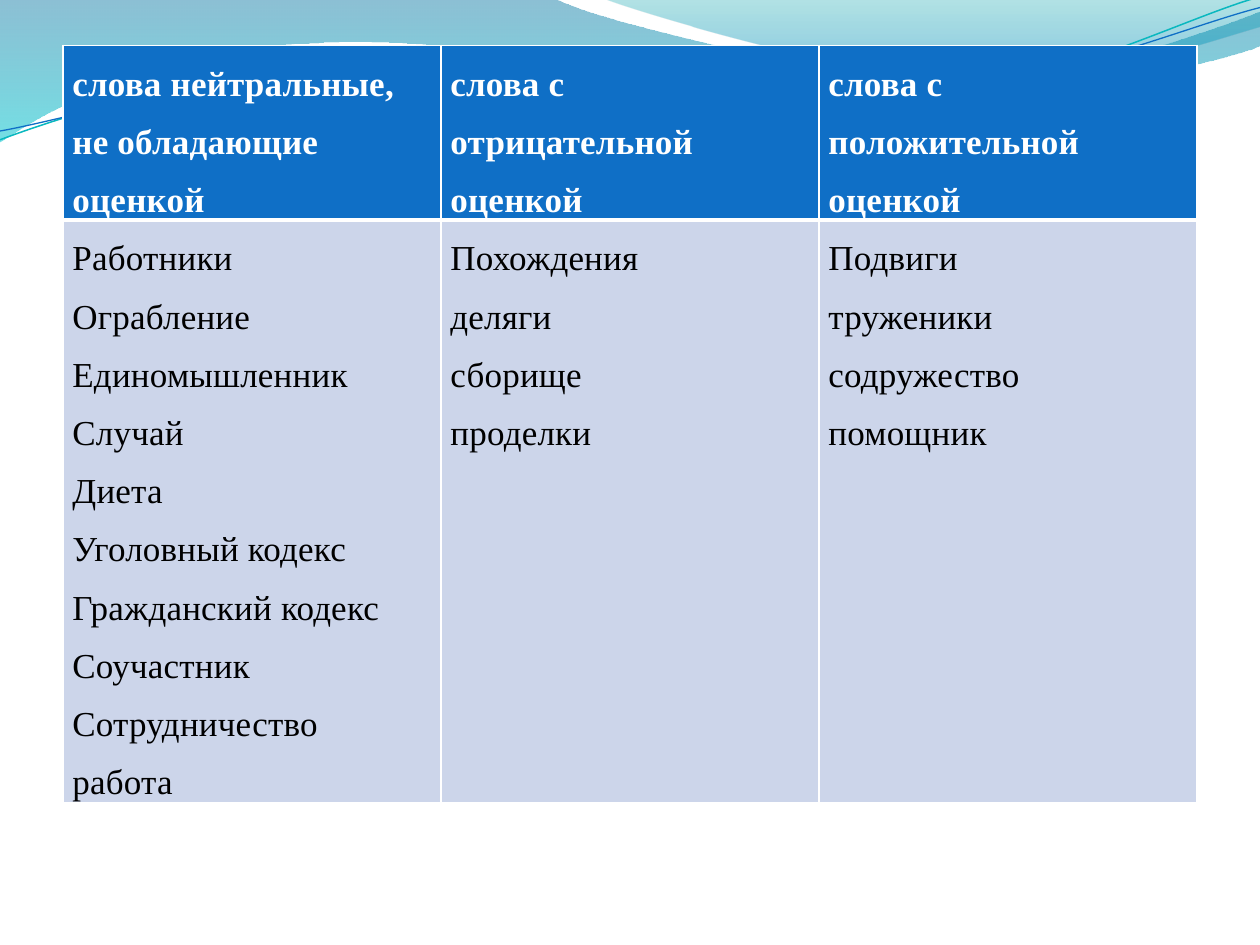
from lxml import etree
from pptx import Presentation
from pptx import util as u
from pptx.dml.color import RGBColor
from pptx.oxml import ns

COLORS = {
    "white": "FFFFFF", "black": "000000", "blue": "0F6FC6", "pale": "CCD5EA",
    "deep": "0074A1", "cyan": "00C6CF", "teal": "00A1A9", "azure": "008BBF",
    "line": "0AB8BF",
}
COLUMNS, ROWS = 10, 7.5
HEADERS = [
    "слова нейтральные, не обладающие оценкой",
    "слова с отрицательной оценкой",
    "слова с положительной оценкой",
]
WORDS = [
    ["Работники", "Ограбление", "Единомышленник", "Случай", "Диета",
     "Уголовный кодекс", "Гражданский кодекс", "Соучастник",
     "Сотрудничество", "работа"],
    ["Похождения", "деляги", "сборище", "проделки"],
    ["Подвиги", "труженики", "содружество", "помощник"],
]
LEFT_WAVE = [
    (0, 0), (4.4, -0.01), (4.76, 0.17, 6.64, 0.63, 7.58, 0.63),
    (8.53, 0.63, 9.58, 0.26, 10, 0.09), (10.01, 0.36),
    (9.83, 0.44, 8.7, 0.76, 7.46, 0.75), (6.22, 0.75, 3.82, 0.28, 2.57, 0.34),
    (1.29, 0.36, 0.46, 0.83, -0.01, 1.13), (0, 0),
]
RIGHT_WAVE = [
    (4.79, -0.01), (5.09, 0.11, 6.82, 0.62, 7.69, 0.65),
    (8.56, 0.69, 9.61, 0.32, 10, 0.21), (10, 0), (4.79, -0.01),
]
TEAL_CURVE = [
    (0, 1.11), (0.48, 0.93, 1.58, 0.57, 2.77, 0.52),
    (3.95, 0.47, 5.93, 0.89, 7.13, 0.8), (8.33, 0.71, 9.38, 0.15, 9.98, -0.02),
]
BLUE_CURVE = [
    (0, 1.04), (0.47, 0.96, 1.64, 0.61, 2.83, 0.56),
    (4.03, 0.51, 5.97, 0.84, 7.17, 0.75), (8.36, 0.67, 9.41, 0.21, 10, 0.06),
]


def rgb(name):
    return RGBColor.from_string(COLORS[name])


def write(frame, lines, color="black", bold=False, size=20, font="Times New Roman",
          spacing=1.5, tracking=10):
    frame.word_wrap = True
    for index, line in enumerate(lines):
        para = frame.add_paragraph() if index else frame.paragraphs[0]
        para.line_spacing = spacing
        span = para.add_run()
        span.text = line
        span.font.name = font
        span.font.size = u.Pt(size)
        span.font.bold = bold
        span.font.color.rgb = rgb(color)
        span.font._element.set("spc", str(tracking))


class Page:
    def __init__(self, deck):
        self.page = deck.slides.add_slide(deck.slide_layouts[6])
        self.column = deck.slide_width / COLUMNS
        self.row = deck.slide_height / ROWS

    def place(self, x, y):
        return round(x * self.column), round(y * self.row)

    def outline(self, path, close):
        anchors = [self.place(*segment[-2:]) for segment in path]
        builder = self.page.shapes.build_freeform(*anchors[0])
        builder.add_line_segments(anchors[1:], close=close)
        shape = builder.convert_to_shape()
        shape.shadow.inherit = False
        edges = list(shape._element.iter(ns.qn("a:lnTo")))
        for edge, segment in zip(edges, path[1:]):
            if len(segment) == 6:
                self.bend(shape, edge, segment)
        return shape

    def bend(self, shape, edge, segment):
        curve = etree.Element(ns.qn("a:cubicBezTo"))
        for index in (0, 2, 4):
            x, y = self.place(*segment[index:index + 2])
            etree.SubElement(curve, ns.qn("a:pt"),
                             x=str(x - shape.left), y=str(y - shape.top))
        edge.getparent().replace(edge, curve)

    def wave(self, path, stops):
        shape = self.outline(path, close=True)
        shape.line.fill.background()
        shape.fill.gradient()
        shape.fill.gradient_angle = 270
        for stop, (position, color, alpha) in zip(shape.fill.gradient_stops, stops):
            stop.position = position
            stop.color.rgb = rgb(color)
            tint = stop._element.find(ns.qn("a:srgbClr"))
            etree.SubElement(tint, ns.qn("a:alpha"), val=str(alpha * 1000))

    def curve(self, path, color, width):
        shape = self.outline(path, close=False)
        shape.fill.background()
        shape.line.color.rgb = rgb(color)
        shape.line.width = u.Pt(width)

    def border(self, cell, **widths):
        properties = cell._tc.get_or_add_tcPr()
        for side, width in widths.items():
            edge = etree.SubElement(properties, ns.qn(f"a:ln{side}"), w=str(u.Pt(width)))
            fill = etree.SubElement(edge, ns.qn("a:solidFill"))
            etree.SubElement(fill, ns.qn("a:srgbClr"), val=COLORS["white"])

    def fill_cell(self, cell, lines, fill, edges, **style):
        cell.margin_left = cell.margin_right = u.Pt(5.4)
        cell.margin_top = cell.margin_bottom = 0
        self.border(cell, **edges)
        cell.fill.solid()
        cell.fill.fore_color.rgb = rgb(fill)
        write(cell.text_frame, lines, **style)

    def table(self, x, y, width, height, row_height, headers, words):
        frame = self.page.shapes.add_table(
            2, len(headers), *self.place(x, y), *self.place(width, height))
        grid = frame.table
        grid.horz_banding = False
        for row in grid.rows:
            row.height = round(row_height * self.row)
        frame.height = round(height * self.row)
        for index, (header, column) in enumerate(zip(headers, words)):
            self.fill_cell(grid.cell(0, index), [header], "blue",
                           dict(L=1, R=1, T=1, B=3), color="white", bold=True)
            self.fill_cell(grid.cell(1, index), column, "pale",
                           dict(L=1, R=1, T=3, B=1))


def main():
    deck = Presentation()
    deck.slide_width, deck.slide_height = u.Inches(10), u.Inches(7.5)
    page = Page(deck)
    page.wave(LEFT_WAVE, [(0, "deep", 45), (1, "cyan", 55)])
    page.wave(RIGHT_WAVE, [(0, "teal", 30), (0.8, "azure", 45)])
    page.curve(TEAL_CURVE, "line", 0.85)
    page.curve(BLUE_CURVE, "blue", 0.75)
    page.table(0.5, 0.36, 9, 6.5, 0.41, HEADERS, WORDS)
    deck.save("out.pptx")


if __name__ == "__main__":
    main()
